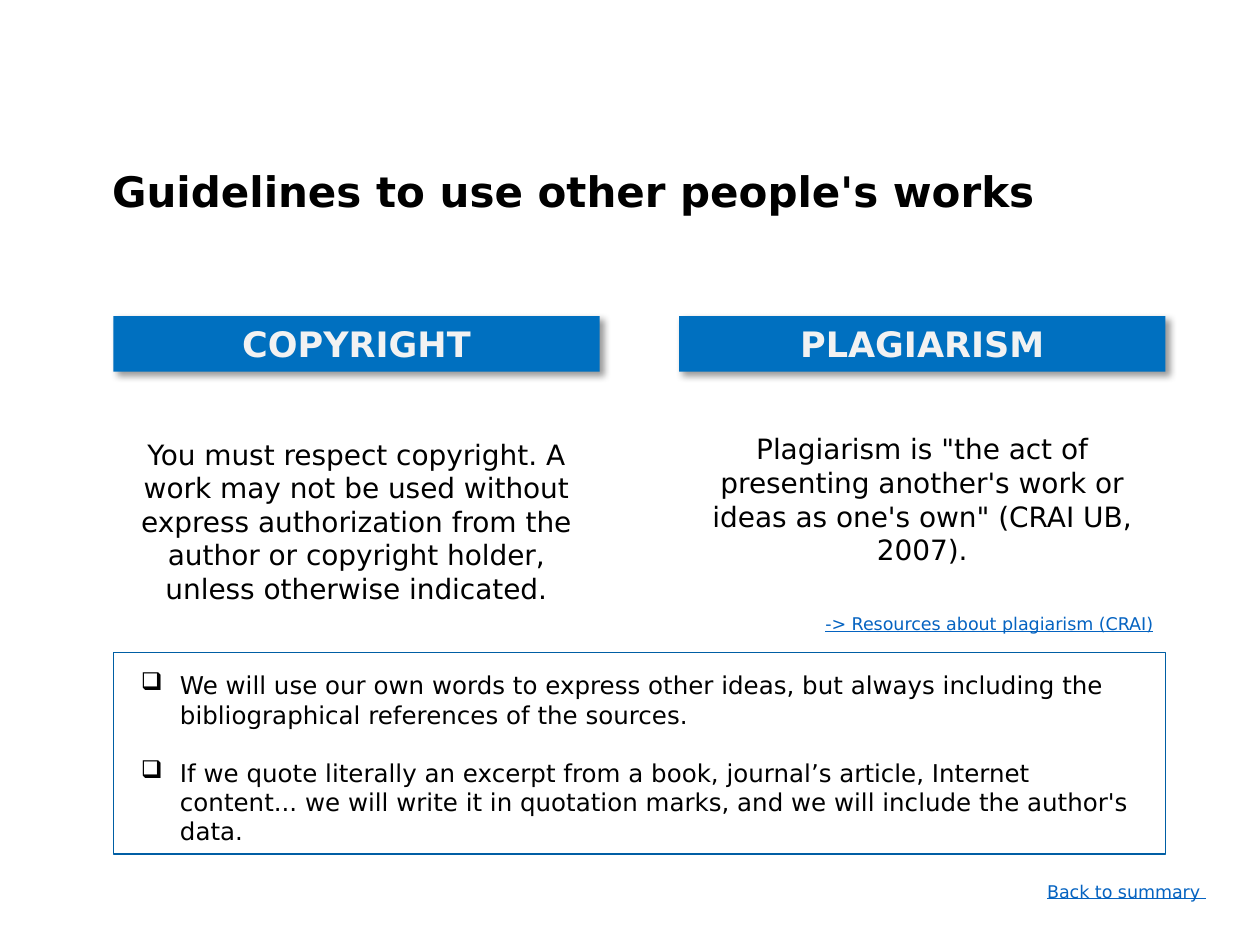
"""Build the slide on guidelines to use other people's works."""
from lxml.etree import SubElement
from pptx import Presentation
from pptx.dml.color import RGBColor
from pptx.enum.shapes import MSO_SHAPE as Shape
from pptx.enum.text import MSO_ANCHOR as Anchor, MSO_AUTO_SIZE as Fit, PP_ALIGN as Align
from pptx.oxml.ns import qn
from pptx.util import Inches, Pt

LEFT, COLUMN, FULL = 0.9, 3.86, 8.35
RIGHT = LEFT + FULL - COLUMN
BANNER_TOP, BANNER_HEIGHT, FRAME_TOP = 2.51, 0.44, 5.18
BLACK, LINK, PALE = "000000", "0563C1", "F2F2F2"


def color(value):
    return RGBColor.from_string(value)


def write(shape, lines, align, bullet=None, gap=0, top=0.05):
    frame = shape.text_frame
    settings = {"word_wrap": True, "auto_size": Fit.NONE, "vertical_anchor": Anchor.TOP,
                "margin_left": Inches(0.1), "margin_right": Inches(0.1),
                "margin_top": Inches(top), "margin_bottom": Inches(0.05)}
    for name, value in settings.items():
        setattr(frame, name, value)
    for index, (text, size, ink, style) in enumerate(lines):
        paragraph = frame.add_paragraph() if index else frame.paragraphs[0]
        paragraph.alignment = style.get("align", align)
        paragraph.space_before = Pt(gap if index else 0)
        if bullet:
            properties = paragraph._p.get_or_add_pPr()
            properties.set("marL", str(Inches(0.31)))
            properties.set("indent", str(-Inches(0.31)))
            SubElement(properties, qn("a:buChar"), char=bullet)
        run = paragraph.add_run()
        run.text = text
        looks = {"name": "DejaVu Sans", "size": Pt(size), "bold": style.get("bold", False),
                 "underline": style.get("underline", False)}
        for name, value in looks.items():
            setattr(run.font, name, value)
        run.font.color.rgb = color(ink)


deck = Presentation()
deck.slide_width, deck.slide_height = Inches(10), Inches(7.5)
slide = deck.slides.add_slide(deck.slide_layouts[5])
shapes = slide.shapes

title = shapes.title
place = {"left": 0.79, "top": 1.26, "width": 7.86, "height": 0.5}
for side, length in place.items():
    setattr(title, side, Inches(length))
write(title, [("Guidelines to use other people's works", 24, BLACK, {"bold": True})], Align.LEFT)

for heading, left in (("COPYRIGHT", LEFT), ("PLAGIARISM", RIGHT)):
    banner = shapes.add_shape(Shape.RECTANGLE, Inches(left), Inches(BANNER_TOP),
                              Inches(COLUMN), Inches(BANNER_HEIGHT))
    banner.fill.solid()
    banner.fill.fore_color.rgb = color("0070C0")
    banner.line.fill.background()
    banner.shadow.inherit = False
    effects = banner._element.spPr.find(qn("a:effectLst"))
    shadow = SubElement(effects, qn("a:outerShdw"), blurRad=str(Pt(4)), dist=str(Pt(3)),
                        dir="2700000", algn="tl", rotWithShape="0")
    shade = SubElement(shadow, qn("a:srgbClr"), val=BLACK)
    SubElement(shade, qn("a:alpha"), val="40000")
    write(banner, [(heading, 20, PALE, {"bold": True})], Align.CENTER)

frame = shapes.add_shape(Shape.RECTANGLE, Inches(LEFT), Inches(FRAME_TOP), Inches(FULL), Inches(1.6))
frame.fill.background()
frame.line.color.rgb = color("005EA4")
frame.line.width = Pt(1)
frame.shadow.inherit = False

copyright_text = [("You must respect copyright. A work may not be used without express authorization "
                   "from the author or copyright holder, unless otherwise indicated.", 16, BLACK, {})]
plagiarism_text = [
    ("Plagiarism is \"the act of presenting another's work or ideas as one's own\" (CRAI UB, 2007).",
     16, BLACK, {}),
    ("-> Resources about plagiarism (CRAI)", 10, LINK, {"underline": True, "align": Align.RIGHT})]
rules = [
    ("We will use our own words to express other ideas, but always including the "
     "bibliographical references of the sources.", 14, BLACK, {}),
    ("If we quote literally an excerpt from a book, journal’s article, Internet content... "
     "we will write it in quotation marks, and we will include the author's data.", 14, BLACK, {})]
summary_link = [("Back to summary ", 10, LINK, {"underline": True})]

for box, lines, align, options in (
        ((LEFT, 3.42, COLUMN, 1.45), copyright_text, Align.CENTER, {}),
        ((RIGHT, 3.38, COLUMN, 1.73), plagiarism_text, Align.CENTER, {"gap": 26.8}),
        ((LEFT + 0.12, 5.27, FULL - 0.24, 1.51), rules, Align.LEFT, {"bullet": "❑", "gap": 16.3}),
        ((8.13, 6.95, 1.62, 0.4), summary_link, Align.CENTER, {"top": 0.04})):
    write(shapes.add_textbox(*map(Inches, box)), lines, align, **options)

deck.save("out.pptx")
